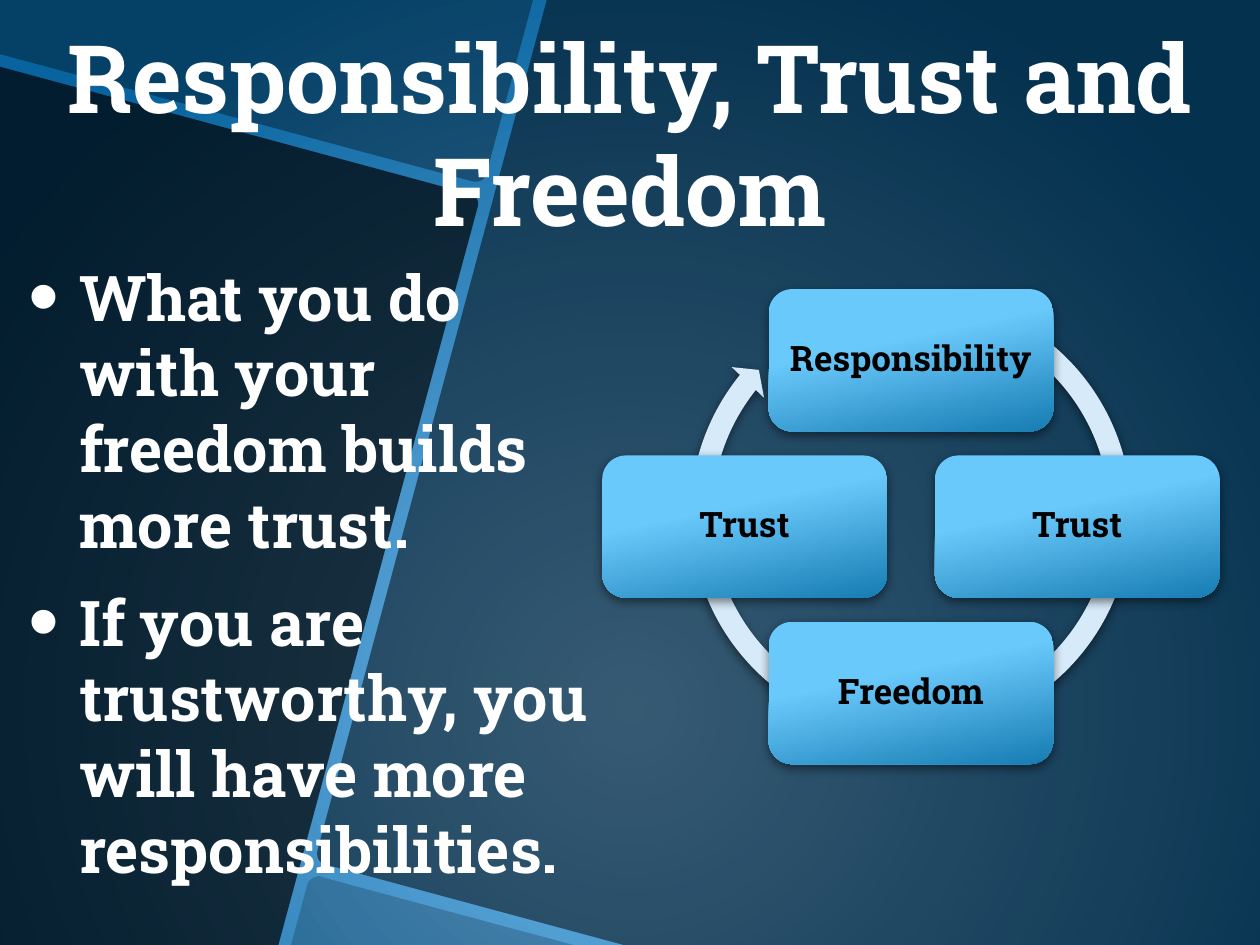
from dataclasses import dataclass

from lxml import etree
from pptx import Presentation
from pptx.dml.color import RGBColor
from pptx.enum.shapes import MSO_SHAPE
from pptx.enum.text import MSO_ANCHOR, PP_ALIGN
from pptx.oxml import parse_xml
from pptx.oxml.ns import nsdecls, qn
from pptx.util import Inches, Pt

ROUND_RECT = MSO_SHAPE.ROUNDED_RECTANGLE
CIRCULAR_ARROW = MSO_SHAPE.CIRCULAR_ARROW
CENTER, LEFT = PP_ALIGN.CENTER, PP_ALIGN.LEFT
TOP, MIDDLE, BOTTOM = MSO_ANCHOR.TOP, MSO_ANCHOR.MIDDLE, MSO_ANCHOR.BOTTOM
FONT = "Roboto Slab"
WHITE, BLACK = "FFFFFF", "000000"
BOX_W, BOX_H = 2.26, 1.13
RING_X, RING_Y, STEP = 7.23, 4.18, 1.32


@dataclass
class Panel:
    """Dark glass panel; a point of six numbers is a Bezier curve."""
    opacity: int
    points: list[tuple[float, ...]]


@dataclass
class Node:
    label: str
    dx: int
    dy: int


PANELS = [
    Panel(70, [(0, 0.53), (3.73, 1.54), (3.78, 1.55, 3.81, 1.6, 3.79, 1.65),
               (2.21, 7.5), (0, 7.5)]),
    Panel(35, [(0, 0), (4.23, 0), (3.86, 1.38),
               (3.85, 1.43, 3.8, 1.45, 3.75, 1.44), (0, 0.43)]),
    Panel(20, [(2.51, 6.96), (2.52, 6.95, 2.54, 6.95, 2.55, 6.96), (4.55, 7.5),
               (2.31, 7.5), (2.44, 7.02), (2.45, 6.99, 2.48, 6.96, 2.51, 6.96)]),
    Panel(50, [(4.34, 0), (10, 0), (10, 7.5), (4.95, 7.5), (2.58, 6.86),
               (2.53, 6.85, 2.51, 6.8, 2.52, 6.75)]),
]
NODES = [Node("Responsibility", 0, -1), Node("Trust", 1, 0),
         Node("Freedom", 0, 1), Node("Trust", -1, 0)]
BULLETS = ["What you do with your freedom builds more trust.",
           "If you are trustworthy, you will have more responsibilities."]


def rgb(color: str) -> RGBColor:
    return RGBColor.from_string(color)


def set_background(s) -> None:
    s.background.fill.solid()
    bg_pr = s.background._cSld.bg.bgPr
    bg_pr.replace(bg_pr[0], parse_xml(
        f'<a:gradFill {nsdecls("a")} rotWithShape="1"><a:gsLst>'
        '<a:gs pos="0"><a:srgbClr val="70B6E8"/></a:gs>'
        '<a:gs pos="100000"><a:srgbClr val="08639E"/></a:gs></a:gsLst>'
        '<a:path path="circle"><a:fillToRect l="50000" t="50000" r="50000" b="0"/>'
        '</a:path></a:gradFill>'))


def flatten(points: list[tuple[float, ...]], steps: int = 6) -> list[tuple]:
    flat = []
    for point in points:
        if len(point) == 2:
            flat.append(point)
            continue
        ctrl = [flat[-1], point[:2], point[2:4], point[4:]]
        for i in range(1, steps + 1):
            t = i / steps
            weights = ((1 - t) ** 3, 3 * t * (1 - t) ** 2, 3 * t * t * (1 - t), t ** 3)
            flat.append(tuple(sum(w * c[axis] for w, c in zip(weights, ctrl))
                              for axis in (0, 1)))
    return flat


def add_panel(s, panel: Panel) -> None:
    points = [(Inches(x), Inches(y)) for x, y in flatten(panel.points)]
    builder = s.shapes.build_freeform(*points[0], scale=1.0)
    builder.add_line_segments(points[1:], close=True)
    sp = builder.convert_to_shape()
    sp.shadow.inherit = False
    sp.line.fill.background()
    sp.fill.solid()
    sp.fill.fore_color.rgb = rgb(BLACK)
    color = sp._element.spPr.find(".//" + qn("a:srgbClr"))
    etree.SubElement(color, qn("a:alpha"), val=str(panel.opacity * 1000))


def add_shadow(sp) -> None:
    sp.shadow.inherit = False
    effects = sp._element.spPr.find(qn("a:effectLst"))
    effects.append(parse_xml(
        f'<a:outerShdw {nsdecls("a")} blurRad="{Pt(6)}" dist="{Pt(2)}" dir="5400000" '
        'algn="ctr" rotWithShape="0"><a:srgbClr val="000000">'
        '<a:alpha val="50000"/></a:srgbClr></a:outerShdw>'))


def add_run(p, text: str, size: int, color: str, align) -> None:
    p.alignment = align
    r = p.add_run()
    r.text = text
    r.font.name, r.font.size, r.font.bold = FONT, Pt(size), True
    r.font.color.rgb = rgb(color)


def add_ring(s) -> None:
    sp = s.shapes.add_shape(CIRCULAR_ARROW, Inches(5.39), Inches(2.24),
                            Inches(3.68), Inches(3.68))
    for i, value in enumerate((0.047, 2.729, 131.349, 178.275, 0.048)):
        sp.adjustments[i] = value
    sp.fill.solid()
    sp.fill.fore_color.rgb = rgb("D6EAF9")
    sp.line.fill.background()
    add_shadow(sp)


def add_node(s, node: Node) -> None:
    sp = s.shapes.add_shape(
        ROUND_RECT, Inches(RING_X + node.dx * STEP - BOX_W / 2),
        Inches(RING_Y + node.dy * STEP - BOX_H / 2), Inches(BOX_W), Inches(BOX_H))
    sp.fill.gradient()
    sp.fill.gradient_angle = 360 - 78
    for stop, pos, color in zip(sp.fill.gradient_stops, (0.38, 1), ("6AC9FB", "167CB2")):
        stop.position = pos
        stop.color.rgb = rgb(color)
    sp.line.fill.background()
    add_shadow(sp)
    tf = sp.text_frame
    tf.word_wrap = True
    tf.vertical_anchor = MIDDLE
    tf.margin_left = tf.margin_right = tf.margin_top = tf.margin_bottom = Inches(0.05)
    p = tf.paragraphs[0]
    p.line_spacing = 0.9
    add_run(p, node.label, 20, BLACK, CENTER)


def add_text_frame(s, x: float, y: float, w: float, h: float, anchor):
    tf = s.shapes.add_textbox(Inches(x), Inches(y), Inches(w), Inches(h)).text_frame
    tf.word_wrap = True
    tf.vertical_anchor = anchor
    return tf


def add_bullets(tf, items: list[str]) -> None:
    for i, item in enumerate(items):
        p = tf.add_paragraph() if i else tf.paragraphs[0]
        p_pr = p._p.get_or_add_pPr()
        p_pr.set("marL", str(Inches(0.4)))
        p_pr.set("indent", str(-Inches(0.4)))
        etree.SubElement(p_pr, qn("a:buSzPct"), val="140000")
        etree.SubElement(p_pr, qn("a:buFont"), typeface="Arial")
        etree.SubElement(p_pr, qn("a:buChar"), char="•")
        p.space_before = Pt(7 if i else 0)
        p.space_after = Pt(6)
        add_run(p, item, 36, WHITE, LEFT)


def main() -> None:
    prs = Presentation()
    prs.slide_width, prs.slide_height = Inches(10), Inches(7.5)
    s = prs.slides.add_slide(prs.slide_layouts[6])

    # Backdrop
    set_background(s)
    for panel in PANELS:
        add_panel(s, panel)

    # Cycle diagram
    add_ring(s)
    for node in NODES:
        add_node(s, node)

    # Title and bullets
    title = add_text_frame(s, 0, 1.16, 10, 0.84, BOTTOM)
    add_run(title.paragraphs[0], "Responsibility, Trust and Freedom", 54, WHITE, CENTER)
    add_bullets(add_text_frame(s, 0.13, 2, 4.76, 5.31, TOP), BULLETS)

    prs.save("out.pptx")


if __name__ == "__main__":
    main()
